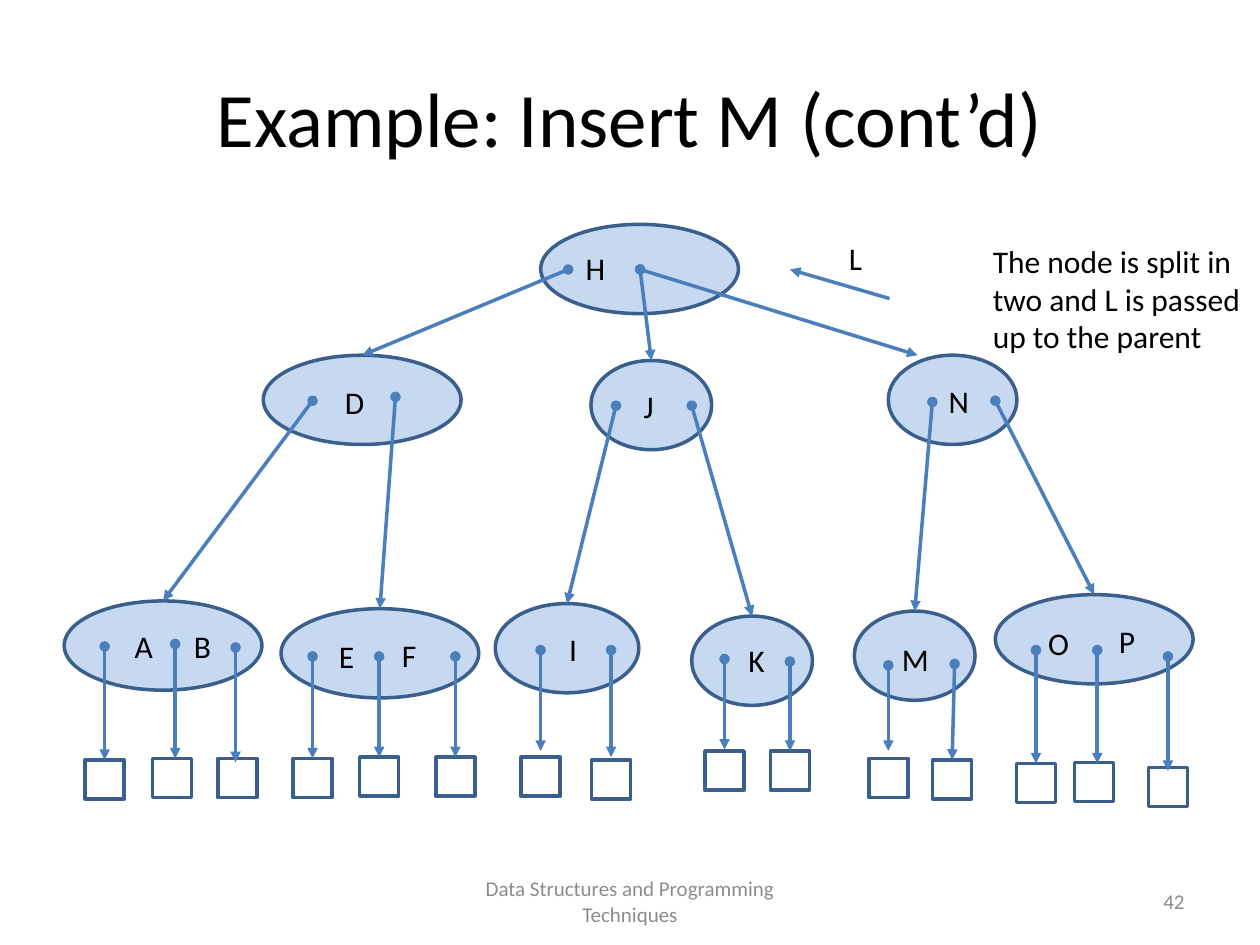
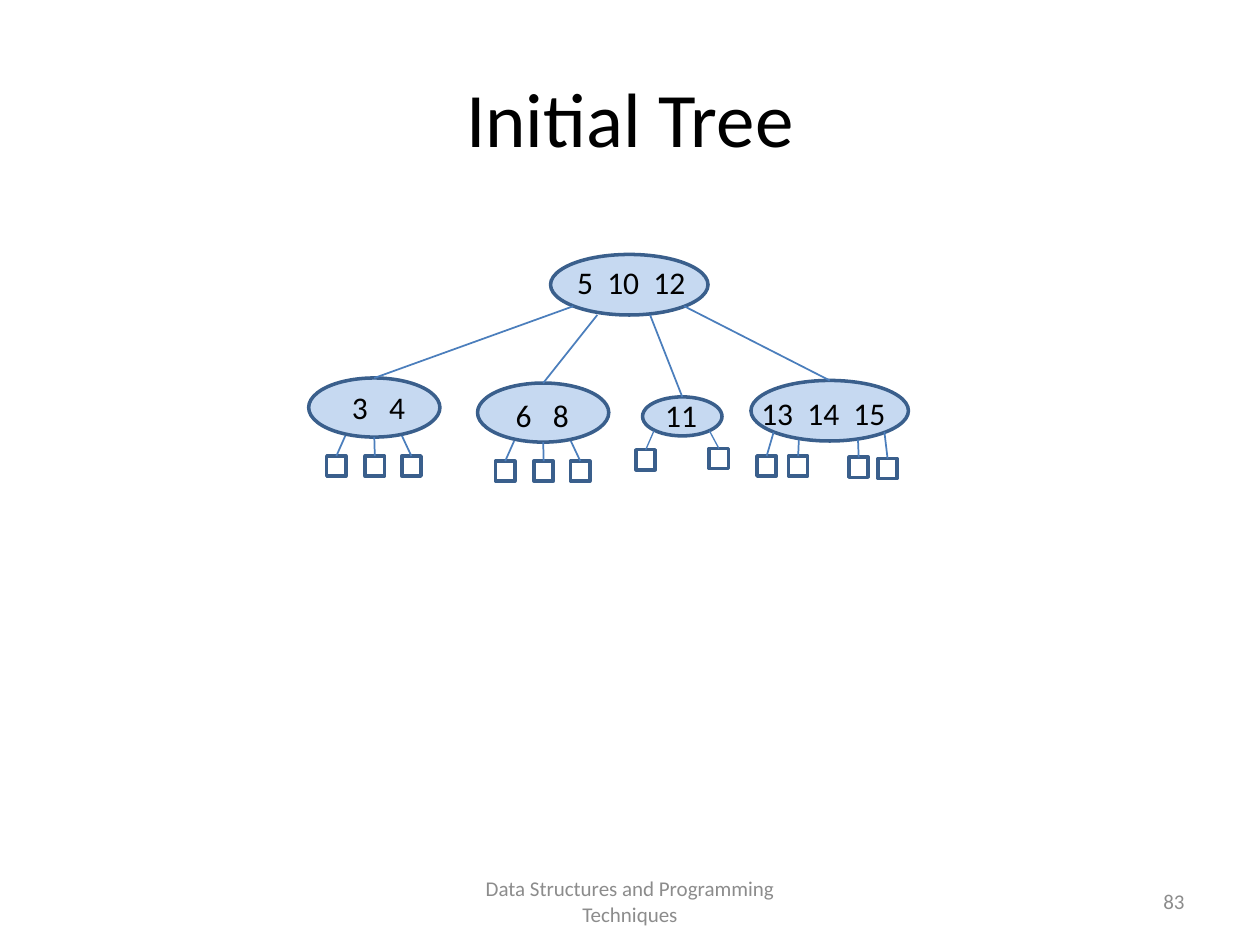
from dataclasses import dataclass

from lxml import etree
from pptx import Presentation
from pptx.dml.color import RGBColor
from pptx.enum import shapes, text
from pptx.oxml import ns
from pptx.util import Pt

BLACK = RGBColor(0x00, 0x00, 0x00)
GREY = RGBColor(0x8C, 0x8C, 0x8C)
NODE_FILL = RGBColor(0xC6, 0xD9, 0xF1)
OUTLINE = RGBColor(0x3A, 0x5F, 0x8C)
LINK = RGBColor(0x4B, 0x7E, 0xBC)
FONT = "Calibri"
FOOTER = "Data Structures and Programming Techniques"
LEFT, CENTER, RIGHT = text.PP_ALIGN.LEFT, text.PP_ALIGN.CENTER, text.PP_ALIGN.RIGHT
TOP, MIDDLE = text.MSO_ANCHOR.TOP, text.MSO_ANCHOR.MIDDLE
OVAL, RECT = shapes.MSO_SHAPE.OVAL, shapes.MSO_SHAPE.RECTANGLE


@dataclass(frozen=True)
class Node:
    left: float
    top: float
    width: float
    height: float = 51

    @property
    def top_center(self) -> tuple[float, float]:
        return self.left + self.width / 2, self.top


@dataclass(frozen=True)
class Key:
    letter: str
    left: float
    top: float


@dataclass(frozen=True)
class Branch:
    x: float
    y: float
    child: str
    shift: float = 0


@dataclass(frozen=True)
class Leaf:
    x: float
    dot_y: float
    tip_y: float
    box_top: float
    box_shift: float = 0
    lean: float = 0


@dataclass(frozen=True)
class Twig:
    x: float
    y: float
    box_x: float
    box_y: float


@dataclass(frozen=True)
class Caption:
    keys: tuple[str, ...]
    left: float
    top: float
    width: float
    gap: float = 4


@dataclass(frozen=True)
class Subtree:
    node: Node
    caption: Caption
    root_x: float
    root_y: float
    twigs: tuple[Twig, ...]
    twig_weight: float = 1


SPLIT_NODES = {
    "H": Node(309, 128.2, 113),
    "D": Node(150.5, 203, 113),
    "J": Node(337.7, 206, 69),
    "N": Node(507.6, 203, 73.5),
    "AB": Node(36.7, 343.4, 113),
    "EF": Node(160.6, 347.8, 113),
    "I": Node(283, 344.9, 82),
    "K": Node(395.3, 352.1, 69),
    "M": Node(488.2, 349.2, 69),
    "OP": Node(568.8, 339.8, 113),
}
SPLIT_KEYS = [
    Key("H", 327.6, 139), Key("D", 190, 215.3), Key("J", 360.7, 217.4),
    Key("N", 535, 214.6), Key("A", 69.8, 355), Key("B", 103.7, 355),
    Key("E", 186.5, 360.7), Key("F", 222.5, 360), Key("I", 318.2, 356.4),
    Key("K", 420.5, 362.9), Key("M", 508.3, 362.2), Key("O", 591.8, 352.8),
    Key("P", 632.2, 352.1), Key("L", 478, 133.2),
]
SPLIT_BRANCHES = [
    Branch(324.7, 154, "D"), Branch(365.8, 154, "J"), Branch(365.8, 154, "N", -20),
    Branch(178.6, 229, "AB"), Branch(226, 226.8, "EF"),
    Branch(352, 231.8, "I"), Branch(395.3, 231.8, "K"),
    Branch(532.8, 229.7, "M"), Branch(568.8, 229, "OP"),
]
SPLIT_LEAVES = [
    Leaf(59.8, 369.4, 434.2, 434.2), Leaf(100.1, 368, 433.4, 433.4, -1.8),
    Leaf(134.6, 370, 435.6, 433.4, 1), Leaf(178.6, 375.1, 433.4, 433.4),
    Leaf(216.7, 375.1, 432.7, 432.7), Leaf(260.2, 375.1, 432.7, 432.7),
    Leaf(308.9, 371.5, 429.1, 432.7), Leaf(349.2, 371.5, 432.7, 434.2),
    Leaf(414, 376.6, 428.4, 429.1), Leaf(451.4, 378, 429.1, 429.1),
    Leaf(507.6, 380.2, 429.1, 433.4), Leaf(545.5, 379.4, 434.2, 434.2, -1.5, -1.4),
    Leaf(592, 371.5, 436.3, 436.3), Leaf(627, 371.5, 436.3, 435.6, -1.8),
    Leaf(667.4, 375.1, 440.6, 438.5),
]
LEAF_SIDE = 22.3
NOTE = "The node is split in two and L is passed\nup to the parent"

ROOT = Node(314.6, 145.4, 90, 34.6)
ROOT_CAPTION = Caption(("5", "10", "12"), 318.2, 146.9, 85)
THREE_TWIGS = (
    Twig(20.9, 33.1, 15.8, 44.6),
    Twig(37.5, 33.8, 37.8, 44.6),
    Twig(53.3, 33.1, 58.7, 44.6),
)
SUBTREES = [
    Subtree(Node(176.4, 216, 75, 33.8), Caption(("3", "4"), 181.4, 218.2, 69.8, 8),
            327.6, 175, THREE_TWIGS),
    Subtree(Node(272.9, 218.9, 75, 33.8), Caption(("6", "8"), 278.6, 222.5, 62.6, 8),
            341.3, 180, THREE_TWIGS),
    Subtree(Node(367.2, 226.8, 45.4, 22.3), Caption(("11",), 371.5, 222.5, 35.3),
            371.5, 180,
            (Twig(6.5, 19.4, 1.8, 30.2), Twig(38.2, 19.4, 43.6, 29.5)), 0.75),
    Subtree(Node(429.1, 217.4, 90, 34.6),
            Caption(("13", "14", "15"), 422.6, 221.8, 95.8), 391, 175,
            (Twig(13, 29.5, 9, 43.2), Twig(27.4, 33.8, 27, 43.2),
             Twig(61.2, 33.8, 61.6, 43.9), Twig(76.3, 29.5, 78.1, 44.6))),
]
TWIG_BOX = (11, 11.5)


def style_run(r, size: float, color: RGBColor) -> None:
    r.font.name = FONT
    r.font.size = Pt(size)
    r.font.color.rgb = color


def add_text(slide, content: str, left: float, top: float, width: float,
             height: float = 29, size: float = 18, color: RGBColor = BLACK,
             align=LEFT, anchor=TOP):
    sp = slide.shapes.add_textbox(Pt(left), Pt(top), Pt(width), Pt(height))
    tf = sp.text_frame
    tf.word_wrap = True
    tf.vertical_anchor = anchor
    tf.text = content
    for p in tf.paragraphs:
        p.alignment = align
        for r in p.runs:
            style_run(r, size, color)
    return sp


def add_caption(slide, caption: Caption) -> None:
    sp = add_text(slide, "", caption.left, caption.top, caption.width, align=CENTER)
    p = sp.text_frame.paragraphs[0]
    for i, key in enumerate(caption.keys):
        if i:
            space = p.add_run()
            space.text = " "
            style_run(space, 18, BLACK)
            space._r.get_or_add_rPr().set("spc", str(caption.gap * 100))
        r = p.add_run()
        r.text = key
        style_run(r, 18, BLACK)


def add_outline(slide, kind, left: float, top: float, width: float, height: float):
    sp = slide.shapes.add_shape(kind, Pt(left), Pt(top), Pt(width), Pt(height))
    sp.shadow.inherit = False
    sp.fill.background()
    sp.line.color.rgb = OUTLINE
    sp.line.width = Pt(2)
    return sp


def add_node(slide, node: Node) -> None:
    sp = add_outline(slide, OVAL, node.left, node.top, node.width, node.height)
    sp.fill.solid()
    sp.fill.fore_color.rgb = NODE_FILL


def add_link(slide, x1: float, y1: float, x2: float, y2: float,
             weight: float = 1, head: str = "", tail: str = "") -> None:
    cxn = slide.shapes.add_connector(
        shapes.MSO_CONNECTOR.STRAIGHT, Pt(x1), Pt(y1), Pt(x2), Pt(y2))
    cxn.line.color.rgb = LINK
    cxn.line.width = Pt(weight)
    ln = cxn.line._get_or_add_ln()
    for tag, end in (("a:headEnd", head), ("a:tailEnd", tail)):
        if end:
            etree.SubElement(ln, ns.qn(tag), type=end)
    etree.SubElement(cxn._element.spPr, ns.qn("a:effectLst"))


def add_pointer(slide, x1: float, y1: float, x2: float, y2: float,
                head: str = "oval") -> None:
    add_link(slide, x1, y1, x2, y2, 2, head, "triangle")


def new_slide(prs, title: str, number: int):
    s = prs.slides.add_slide(prs.slide_layouts[6])
    add_text(s, title, 36, 21.6, 648, 90, 44, align=CENTER, anchor=MIDDLE)
    add_text(s, FOOTER, 246, 500.5, 228, 28.8, 12, GREY, CENTER, MIDDLE)
    add_text(s, str(number), 516, 500.5, 168, 28.8, 12, GREY, RIGHT, MIDDLE)
    return s


def build_insert_slide(prs) -> None:
    s = new_slide(prs, "Example: Insert M (cont’d)", 42)
    for node in SPLIT_NODES.values():
        add_node(s, node)
    for key in SPLIT_KEYS:
        add_text(s, key.letter, key.left, key.top, 34)
    for branch in SPLIT_BRANCHES:
        x, y = SPLIT_NODES[branch.child].top_center
        add_pointer(s, branch.x, branch.y, x + branch.shift, y)
    for leaf in SPLIT_LEAVES:
        add_outline(s, RECT, leaf.x + leaf.box_shift - LEAF_SIDE / 2, leaf.box_top,
                    LEAF_SIDE, LEAF_SIDE)
        add_pointer(s, leaf.x, leaf.dot_y, leaf.x + leaf.lean, leaf.tip_y)
    add_pointer(s, 508.3, 170.6, 451.4, 154, head="")
    add_text(s, NOTE, 560.2, 134.6, 159.8, 72.7)


def build_tree_slide(prs) -> None:
    s = new_slide(prs, "Initial Tree", 83)
    add_node(s, ROOT)
    add_caption(s, ROOT_CAPTION)
    width, height = TWIG_BOX
    for tree in SUBTREES:
        node = tree.node
        add_node(s, node)
        add_link(s, tree.root_x, tree.root_y, *node.top_center)
        for twig in tree.twigs:
            x, y = node.left + twig.box_x, node.top + twig.box_y
            add_outline(s, RECT, x - width / 2, y, width, height)
            add_link(s, node.left + twig.x, node.top + twig.y, x, y, tree.twig_weight)
        add_caption(s, tree.caption)


def main() -> None:
    prs = Presentation()
    prs.slide_width, prs.slide_height = Pt(720), Pt(540)
    build_insert_slide(prs)
    build_tree_slide(prs)
    prs.save("out.pptx")


if __name__ == "__main__":
    main()
